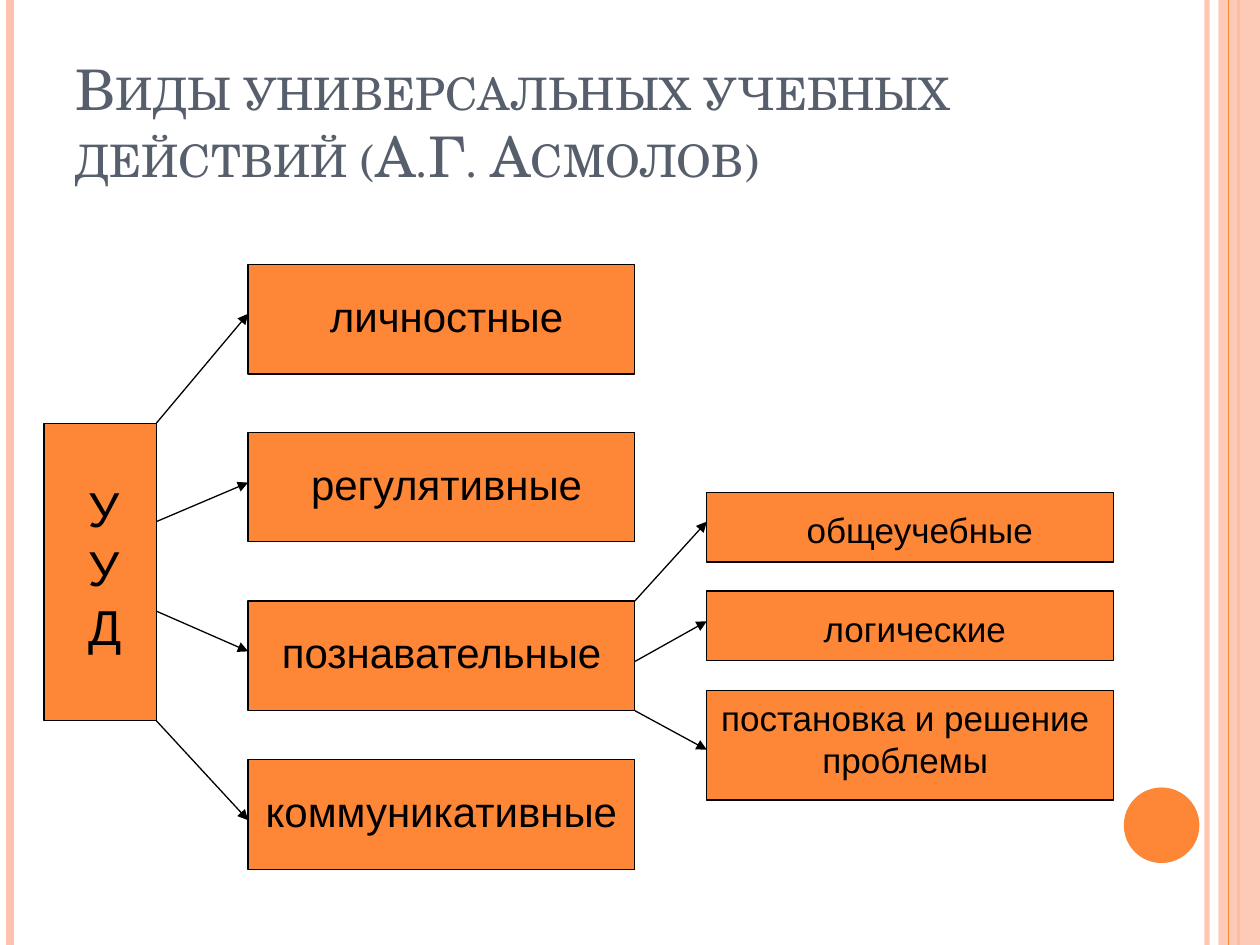
"""Build a slide charting the kinds of universal learning actions."""
from lxml import etree
from pptx import Presentation
from pptx.dml.color import RGBColor
from pptx.enum import shapes, text
from pptx.oxml.ns import qn
from pptx.util import Pt

COLORS = {"orange": "FE8637", "peach": "FEC3AE", "slate": "575F6D", "black": "000000"}
WIDTH, HEIGHT = 720, 540
TITLE = "Виды универсальных учебных действий (А.Г. Асмолов)"
ROOT = {"label": "УУД", "box": (25.2, 241.9, 64.1, 169.9), "label_area": (43.2, 270, 35.3, 108)}

KIND_LEFT, KIND_WIDTH, KIND_HEIGHT = 141.8, 221, 62.6
KINDS = [
    ("личностные", 151.2, 159.1, 192.2),
    ("регулятивные", 247, 159.1, 192.2),
    ("познавательные", 343.4, 147.6, 209.5),
    ("коммуникативные", 434.2, 141.8, 221),
]
SUBKIND_LEFT, SUBKIND_WIDTH = 403.9, 232.6
SUBKINDS = [
    ("общеучебные", 281.5, 39.6, (438.5, 287.3, 174.2, 31)),
    ("логические", 337.7, 39.6, (455.8, 343.4, 133.9, 31)),
    ("постановка и решение проблемы", 394.6, 62.6, (403.9, 394.6, 226.8, 55.4)),
]
ROOT_ARROWS = [(241.9, 179.3), (298.1, 275.8), (349.2, 372.2), (411.8, 468.7)]
SUBKIND_ARROWS = [(343.4, 298.1), (378, 355), (406.1, 428.4)]
EDGE_LINES = [(689.8, "peach", 3, 93), (5.8, "peach", 4.5, 100), (707.8, "orange", 1.5, 100)]
INNER_EDGE_LINE = (702, "orange", 0.75, 100)


def rgb(name):
    return RGBColor.from_string(COLORS[name])


def set_opacity(properties, percent):
    if percent < 100:
        color = properties.find(".//" + qn("a:srgbClr"))
        etree.SubElement(color, qn("a:alpha"), val=str(percent * 1000))


def add_block(page, area, fill="orange", kind=shapes.MSO_SHAPE.RECTANGLE, outlined=True, opacity=100):
    block = page.shapes.add_shape(kind, *map(Pt, area))
    block.shadow.inherit = False
    block.fill.solid()
    block.fill.fore_color.rgb = rgb(fill)
    set_opacity(block.fill._xPr, opacity)
    if outlined:
        block.line.color.rgb = rgb("black")
        block.line.width = Pt(0.75)
    else:
        block.line.fill.background()


def add_line(page, start, end, color="black", width=0.75, opacity=100, arrow=False):
    line = page.shapes.add_connector(shapes.MSO_CONNECTOR.STRAIGHT, *map(Pt, start + end))
    line.line.color.rgb = rgb(color)
    line.line.width = Pt(width)
    properties = line._element.spPr
    set_opacity(properties, opacity)
    if arrow:
        etree.SubElement(properties.find(qn("a:ln")), qn("a:tailEnd"), type="triangle")
    etree.SubElement(properties, qn("a:effectLst"))


def add_edge_line(page, x, color, width, opacity):
    add_line(page, (x, 0), (x, HEIGHT), color, width, opacity)


def add_label(page, words, area, size, font="Arial", color="black", align=text.PP_ALIGN.CENTER):
    box = page.shapes.add_textbox(*map(Pt, area))
    box.text_frame.word_wrap = True
    box.text_frame.text = words
    para = box.text_frame.paragraphs[0]
    para.alignment = align
    span = para.runs[0]
    span.font.size = Pt(size)
    span.font.name = font
    span.font.color.rgb = rgb(color)
    return box


def add_decoration(page):
    for edge in EDGE_LINES:
        add_edge_line(page, *edge)
    add_block(page, (696.2, 0, 23.8, HEIGHT), "peach", outlined=False, opacity=87)
    add_edge_line(page, *INNER_EDGE_LINE)
    add_block(page, (642.2, 450, 43.2, 43.2), kind=shapes.MSO_SHAPE.OVAL, outlined=False)


def add_title(page):
    title = add_label(page, TITLE, (36, 21.6, 588.2, 90), 32, "TeX Gyre Schola", "slate", text.PP_ALIGN.LEFT)
    title.text_frame.vertical_anchor = text.MSO_ANCHOR.BOTTOM
    title.text_frame.paragraphs[0].runs[0].font._element.set("cap", "small")


def add_arrows(page, left, right, heights):
    for start, end in heights:
        add_line(page, (left, start), (right, end), arrow=True)


def add_diagram(page):
    add_block(page, ROOT["box"])
    add_label(page, ROOT["label"], ROOT["label_area"], 28, align=text.PP_ALIGN.LEFT)
    for words, top, label_left, label_width in KINDS:
        add_block(page, (KIND_LEFT, top, KIND_WIDTH, KIND_HEIGHT))
        add_label(page, words, (label_left, top + 11.2, label_width, 36), 24)
    for words, top, height, label_area in SUBKINDS:
        add_block(page, (SUBKIND_LEFT, top, SUBKIND_WIDTH, height))
        add_label(page, words, label_area, 20)
    add_arrows(page, ROOT["box"][0] + ROOT["box"][2], KIND_LEFT, ROOT_ARROWS)
    add_arrows(page, KIND_LEFT + KIND_WIDTH, SUBKIND_LEFT, SUBKIND_ARROWS)


def main():
    deck = Presentation()
    deck.slide_width, deck.slide_height = Pt(WIDTH), Pt(HEIGHT)
    page = deck.slides.add_slide(deck.slide_layouts[6])
    add_decoration(page)
    add_title(page)
    add_diagram(page)
    deck.save("out.pptx")


if __name__ == "__main__":
    main()
